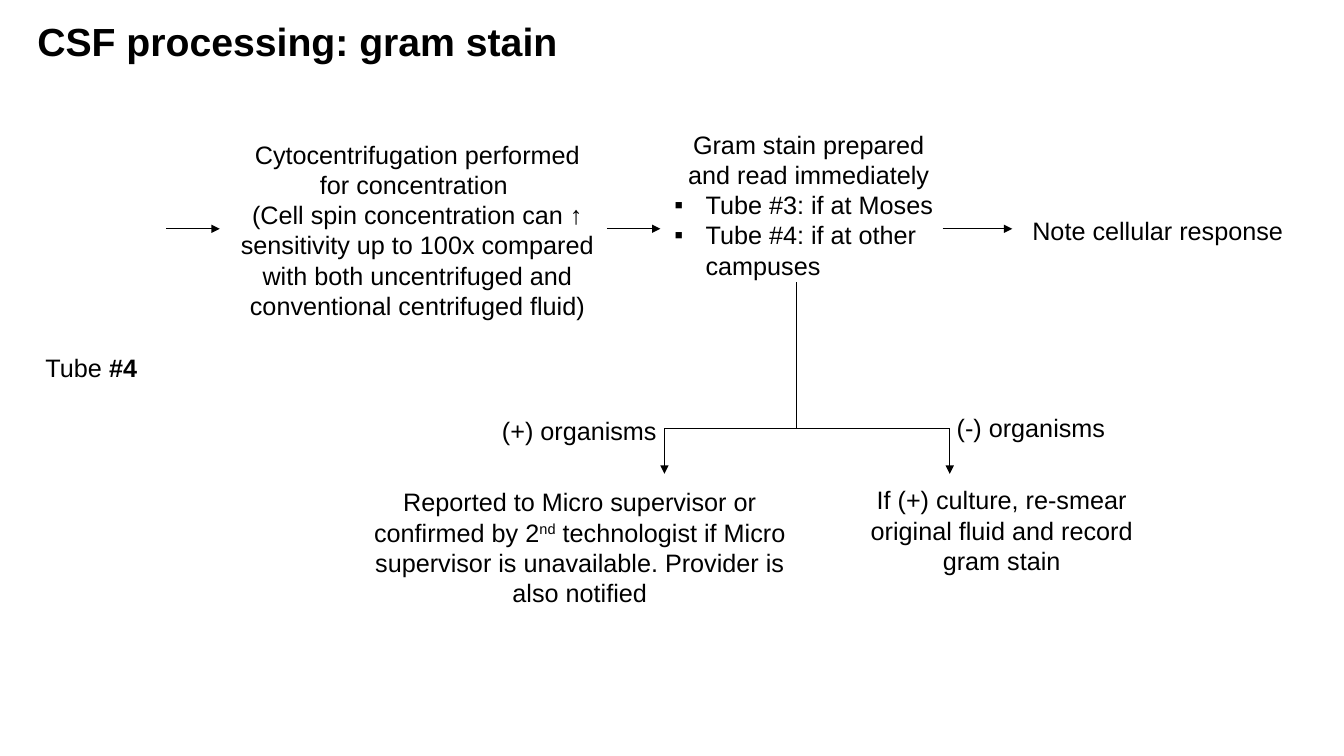
from lxml import etree
from pptx import Presentation
from pptx.dml.color import RGBColor
from pptx.enum.shapes import MSO_CONNECTOR
from pptx.enum.text import MSO_ANCHOR, MSO_AUTO_SIZE, PP_ALIGN
from pptx.oxml.ns import qn
from pptx.util import Inches, Pt

STRAIGHT = MSO_CONNECTOR.STRAIGHT
LEFT, CENTER = PP_ALIGN.LEFT, PP_ALIGN.CENTER
MIDDLE = MSO_ANCHOR.MIDDLE
FIT_SHAPE = MSO_AUTO_SIZE.SHAPE_TO_FIT_TEXT
FONT, BLACK = "Arial", "000000"
BODY_SIZE, TITLE_SIZE = 18, 28


def color(hex_string):
    return RGBColor.from_string(hex_string)


def add_run(paragraph, text, size=BODY_SIZE, bold=False, superscript=False):
    run = paragraph.add_run()
    run.text = text
    run.font.name = FONT
    run.font.size = Pt(size)
    run.font.bold = bold
    run.font.color.rgb = color(BLACK)
    if superscript:
        run.font._element.set("baseline", "30000")


def add_bullet(paragraph):
    properties = paragraph._p.get_or_add_pPr()
    indent = Inches(0.31)
    properties.set("marL", str(indent))
    properties.set("indent", str(-indent))
    etree.SubElement(properties, qn("a:buFont")).set("typeface", FONT)
    etree.SubElement(properties, qn("a:buChar")).set("char", "▪")


def add_text(slide, box, paragraphs, align=CENTER, wrap=True, bullets=()):
    """Add a text box; each paragraph is a list of (text, run options) pairs."""
    shape = slide.shapes.add_textbox(*map(Inches, box))
    frame = shape.text_frame
    frame.word_wrap = wrap
    frame.auto_size = FIT_SHAPE
    for index, runs in enumerate([*paragraphs, *bullets]):
        paragraph = frame.add_paragraph() if index else frame.paragraphs[0]
        if index < len(paragraphs):
            paragraph.alignment = align
        else:
            paragraph.alignment = LEFT
            add_bullet(paragraph)
        for text, options in runs:
            add_run(paragraph, text, **options)


def plain(text):
    return [(text, {})]


def add_line(slide, start, end, arrow=False):
    line = slide.shapes.add_connector(STRAIGHT, *map(Inches, (*start, *end)))
    line.line.color.rgb = color(BLACK)
    line.line.width = Pt(0.5)
    if arrow:
        outline = line.line._get_or_add_ln()
        etree.SubElement(outline, qn("a:tailEnd")).set("type", "triangle")
    etree.SubElement(line._element.spPr, qn("a:effectLst"))


def add_title(slide, box, text):
    title = slide.shapes.title
    title.left, title.top, title.width, title.height = map(Inches, box)
    title.text_frame.vertical_anchor = MIDDLE
    paragraph = title.text_frame.paragraphs[0]
    paragraph.alignment = LEFT
    paragraph.line_spacing = 0.9
    add_run(paragraph, text, TITLE_SIZE, bold=True)


def add_processing_row(slide, left, top):
    """Place the steps from tube to cellular response, joined by arrows."""
    add_text(slide, (left, top + 2.22, 2.01, 0.4),
             [[("Tube ", {}), ("#4", {"bold": True})]])
    add_text(slide, (left + 2.36, top + 0.1, 3.76, 1.92), [
        plain("Cytocentrifugation performed for concentration "),
        plain("(Cell spin concentration can ↑ sensitivity up to 100x compared "
              "with both uncentrifuged and conventional centrifuged fluid)"),
    ])
    add_text(slide, (left + 6.69, top, 2.86, 1.62),
             [plain("Gram stain prepared and read immediately")],
             bullets=[plain("Tube #3: if at Moses"),
                      plain("Tube #4: if at other campuses")])
    add_text(slide, (left + 10.24, top + 0.86, 2.71, 0.4),
             [plain("Note cellular response")], LEFT, wrap=False)
    arrow_y = top + 1.04
    for offset, length in ((1.75, 0.53), (6.12, 0.53), (9.45, 0.69)):
        start = left + offset
        add_line(slide, (start, arrow_y), (start + length, arrow_y), arrow=True)


def add_outcome_branch(slide, left, top, width):
    """Split the gram stain step into positive and negative outcomes."""
    right, bar_y = left + width, top + 1.45
    stem_x = left + 1.31
    add_line(slide, (stem_x, top), (stem_x, bar_y))
    add_line(slide, (left, bar_y), (right, bar_y))
    for x in (left, right):
        add_line(slide, (x, bar_y), (x, bar_y + 0.45), arrow=True)
    add_text(slide, (left - 1.71, bar_y - 0.18, 1.75, 0.4),
             [plain("(+) organisms")], LEFT, wrap=False)
    add_text(slide, (right - 0.03, bar_y - 0.21, 2.01, 0.4),
             [plain("(-) organisms")], LEFT)
    add_text(slide, (left - 3.18, bar_y + 0.53, 4.68, 1.31), [[
        ("Reported to Micro supervisor or confirmed by 2", {}),
        ("nd", {"superscript": True}),
        (" technologist if Micro supervisor is unavailable. "
         "Provider is also notified", {}),
    ]])
    add_text(slide, (right - 1.05, bar_y + 0.51, 3.13, 1.01), [plain(
        "If (+) culture, re-smear original fluid and record gram stain")])


def main():
    presentation = Presentation()
    presentation.slide_width = Inches(13.33)
    presentation.slide_height = Inches(7.5)
    slide = presentation.slides.add_slide(presentation.slide_layouts[5])
    add_title(slide, (0.27, 0.02, 11.5, 0.82), "CSF processing: gram stain")
    add_processing_row(slide, -0.1, 1.23)
    add_outcome_branch(slide, 6.59, 2.8, 2.83)
    presentation.save("out.pptx")


if __name__ == "__main__":
    main()
